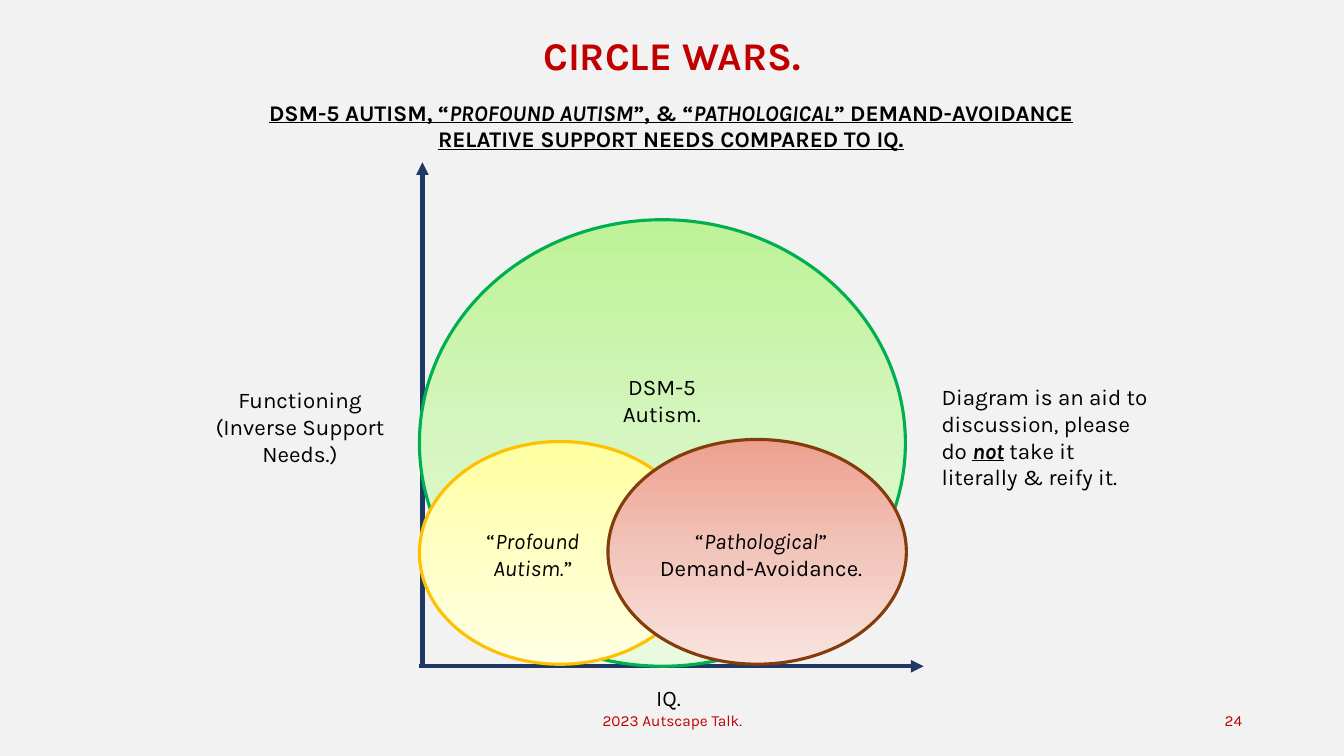
from copy import deepcopy

from lxml.etree import SubElement
from pptx import Presentation
from pptx.dml.color import RGBColor
from pptx.enum.shapes import MSO_CONNECTOR as Connector, MSO_SHAPE as Shape
from pptx.enum.text import MSO_ANCHOR as Anchor, MSO_AUTO_SIZE as AutoSize, PP_ALIGN as Align
from pptx.oxml.ns import qn
from pptx.util import Inches, Pt


def colour(value):
    return RGBColor.from_string(value)


class Page:
    font = "Karla"
    black = "000000"
    red = "C00000"
    navy = "203864"

    def __init__(self, deck):
        self.slide = deck.slides.add_slide(deck.slide_layouts[5])
        background = self.slide.background.fill
        background.solid()
        background.fore_color.rgb = colour("F2F2F2")

    def add_spans(self, box, spans, size, ink, align, anchor, style=""):
        frame = box.text_frame
        frame.word_wrap = True
        frame.auto_size = AutoSize.NONE
        frame.vertical_anchor = anchor
        para = frame.paragraphs[0]
        para.alignment = align
        para.line_spacing = 1.0
        for text, extra in spans:
            marks = style + extra
            span = para.add_run()
            span.text = text
            span.font.name = self.font
            span.font.size = Pt(size)
            span.font.color.rgb = colour(ink)
            span.font.bold = "b" in marks
            span.font.italic = "i" in marks
            span.font.underline = "u" in marks

    def title(self, place, text):
        box = self.slide.shapes.title
        box.left, box.top, box.width, box.height = map(Inches, place)
        self.add_spans(box, [(text, "")], 28, self.red, Align.CENTER, Anchor.TOP, "b")

    def text(self, place, *spans, size=16, ink=black, align=Align.CENTER,
             anchor=Anchor.TOP, style=""):
        box = self.slide.shapes.add_textbox(*map(Inches, place))
        self.add_spans(box, spans, size, ink, align, anchor, style)

    def footer(self, place, text, align):
        self.text(place, (text, ""), size=11, ink=self.red, align=align, anchor=Anchor.MIDDLE)

    def axis(self, start, end):
        arrow = self.slide.shapes.add_connector(
            Connector.STRAIGHT, *map(Inches, start + end))
        arrow.line.color.rgb = colour(self.navy)
        arrow.line.width = Pt(3)
        properties = arrow._element.spPr
        SubElement(properties.find(qn("a:ln")), qn("a:tailEnd"), type="triangle")
        SubElement(properties, qn("a:effectLst"))

    def ellipse(self, place, shades, edge):
        oval = self.slide.shapes.add_shape(Shape.OVAL, *map(Inches, place))
        oval.shadow.inherit = False
        oval.line.color.rgb = colour(edge)
        oval.line.width = Pt(2.25)
        oval.fill.gradient()
        oval.fill.gradient_angle = 270
        stops = oval._element.spPr.find(qn("a:gradFill")).find(qn("a:gsLst"))
        stops.append(deepcopy(stops[0]))
        for index, (stop, shade) in enumerate(zip(oval.fill.gradient_stops, shades)):
            stop.position = index / 2
            stop.color.rgb = colour(shade)


def main():
    deck = Presentation()
    deck.slide_width, deck.slide_height = Inches(13.33), Inches(7.5)
    page = Page(deck)

    page.title((0.68, 0.26, 11.97, 0.57), "CIRCLE WARS.")
    page.footer((4.42, 6.95, 4.5, 0.4), "2023 Autscape Talk.", Align.CENTER)
    page.footer((9.42, 6.95, 3, 0.4), "24", Align.RIGHT)
    page.text((2.45, 0.93, 8.41, 0.64),
              ("DSM-5 AUTISM, “", ""), ("PROFOUND AUTISM", "i"), ("”, & “", ""),
              ("PATHOLOGICAL", "i"),
              ("” DEMAND-AVOIDANCE RELATIVE SUPPORT NEEDS COMPARED TO IQ.", ""),
              style="bu")

    page.axis((4.19, 6.61), (4.19, 1.61))
    page.axis((4.16, 6.61), (9.16, 6.61))

    page.ellipse((4.16, 2.18, 4.82, 4.43), ("BEF297", "D5F6C0", "EAFAE0"), "00B050")
    page.ellipse((4.16, 4.38, 2.79, 2.21), ("FFFFA0", "FFFFC5", "FFFFE3"), "FFC000")
    page.ellipse((6.03, 4.36, 2.96, 2.23), ("EDA08E", "F2C5BB", "F8E3DE"), "843C0B")

    page.text((5.74, 3.65, 1.65, 0.37), ("DSM-5 Autism.", ""))
    page.text((4.67, 5.18, 1.23, 0.64),
              ("“", ""), ("Profound Autism.", "i"), ("”", ""))
    page.text((6.42, 5.18, 2.26, 0.64),
              ("“", ""), ("Pathological", "i"), ("” Demand-Avoidance.", ""))
    page.text((6.41, 6.74, 0.5, 0.37), ("IQ.", ""), align=Align.LEFT)
    page.text((1.84, 3.78, 2.27, 0.64), ("Functioning (Inverse Support Needs.)", ""))
    page.text((9.24, 3.75, 2.26, 1.18),
              ("Diagram is an aid to discussion, please do ", ""), ("not", "biu"),
              (" take it literally & reify it.", ""), align=Align.LEFT)

    deck.save("out.pptx")


if __name__ == "__main__":
    main()
